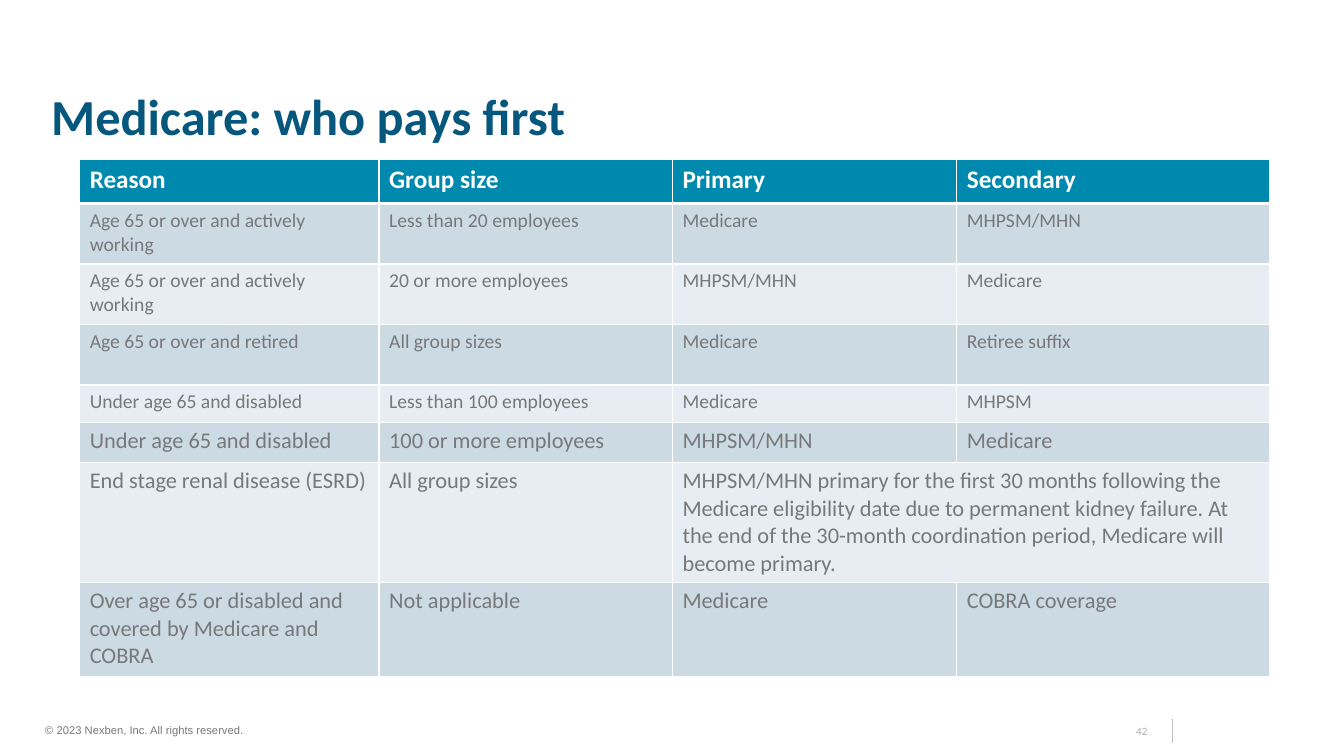
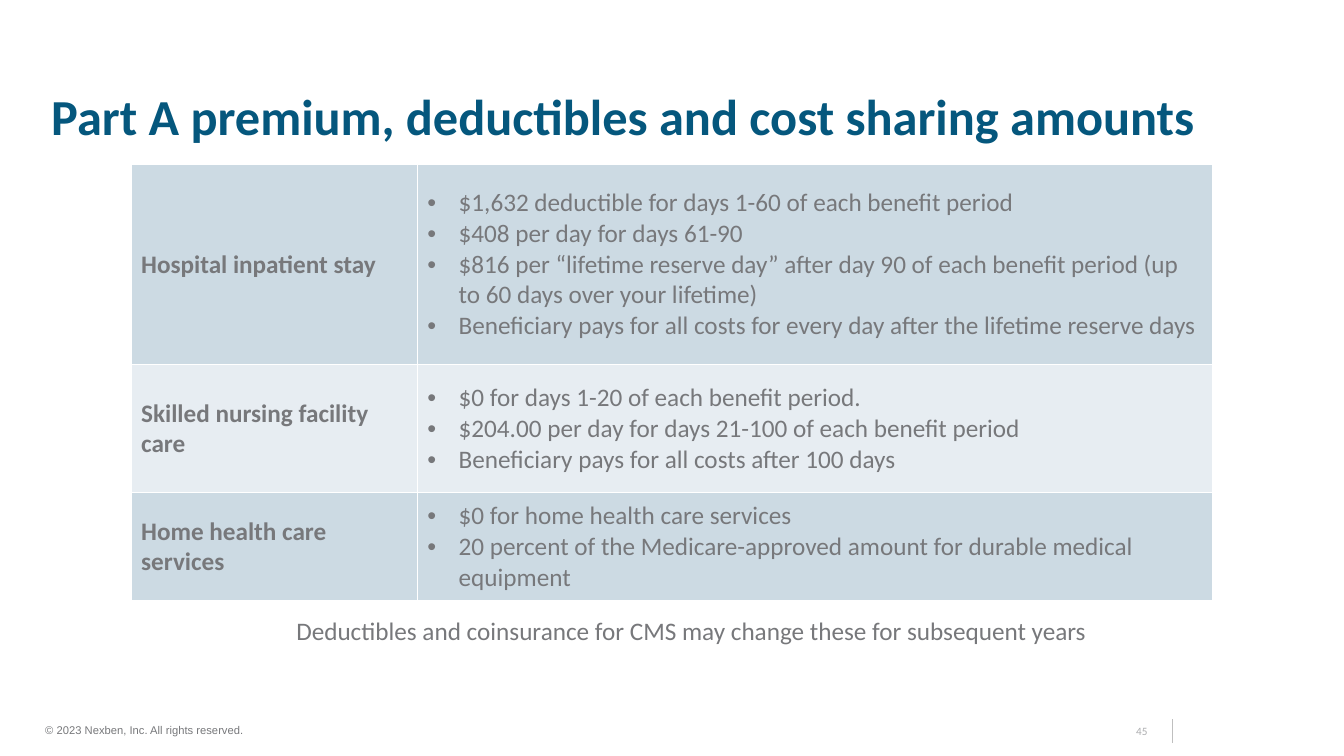
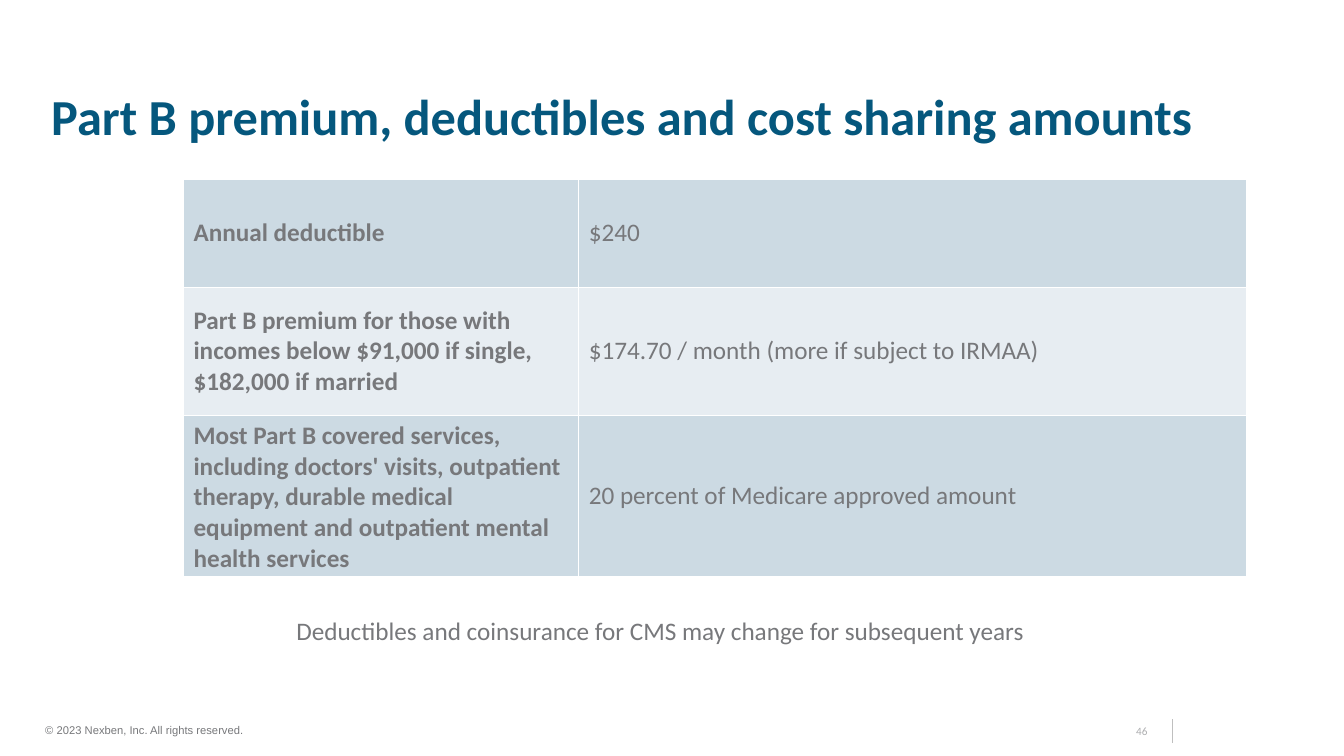
from pptx import Presentation
from pptx.dml.color import RGBColor
from pptx.enum.shapes import MSO_CONNECTOR
from pptx.enum.text import MSO_ANCHOR, PP_ALIGN
from pptx.oxml.ns import qn
from pptx.util import Inches, Pt
from lxml.etree import SubElement

WHITE, NAVY, TEAL = "FFFFFF", "05577D", "0089AE"
GRAY, LIGHT_GRAY, RULE_GRAY = "77787B", "ADAEB0", "BFBFBF"
BANDS = ("CCDAE3", "E7EDF2")

TITLE = {"name": "Calibri", "size": Pt(36), "bold": True, "color": NAVY}
HEADER = {"name": "Calibri", "size": Pt(18), "bold": True, "color": WHITE}
BODY = {"name": "Calibri", "size": Pt(18), "bold": False, "color": GRAY}
LABEL = {**BODY, "bold": True}
COPYRIGHT = {"name": "Arial", "size": Pt(8), "color": GRAY}
NUMBER = {"name": "Calibri", "size": Pt(8), "color": LIGHT_GRAY}

TITLE_BOX = (0.41, 0.3, 12.5, 1.2)
FOOTER_BOX = (0.35, 7.12, 11.28, 0.25)
NOTE_BOX = (2.84, 6.05, 8.51, 0.71)

PAYER_COLUMNS = (2.97, 2.91, 2.82, 3.1)
PAYER_HEADINGS = ("Reason", "Group size", "Primary", "Secondary")
PAYER_ROWS = (
    (0.6, 14, ("Age 65 or over and actively working", "Less than 20 employees",
               "Medicare", "MHPSM/MHN")),
    (0.6, 14, ("Age 65 or over and actively working", "20 or more employees",
               "MHPSM/MHN", "Medicare")),
    (0.6, 14, ("Age 65 or over and retired", "All group sizes",
               "Medicare", "Retiree suffix")),
    (0.37, 14, ("Under age 65 and disabled", "Less than 100 employees",
                "Medicare", "MHPSM")),
    (0.4, 16, ("Under age 65 and disabled", "100 or more employees",
               "MHPSM/MHN", "Medicare")),
    (1.19, 16, ("End stage renal disease (ESRD)", "All group sizes",
                "MHPSM/MHN primary for the first 30 months following the "
                "Medicare eligibility date due to permanent kidney failure. "
                "At the end of the 30-month coordination period, Medicare "
                "will become primary.")),
    (0.93, 16, ("Over age 65 or disabled and covered by Medicare and COBRA",
                "Not applicable", "Medicare", "COBRA coverage")),
)

COST_SLIDES = (
    {
        "title": "Part A premium, deductibles and cost sharing amounts",
        "number": "45",
        "origin": (1.3, 1.63),
        "columns": (2.84, 7.89),
        "rows": (
            (1.99, "Hospital inpatient stay", (
                "$1,632 deductible for days 1-60 of each benefit period",
                "$408 per day for days 61-90",
                "$816 per “lifetime reserve day” after day 90 of each benefit "
                "period (up to 60 days over your lifetime)",
                "Beneficiary pays for all costs for every day after the "
                "lifetime reserve days")),
            (1.27, "Skilled nursing facility care", (
                "$0 for days 1-20 of each benefit period.",
                "$204.00 per day for days 21-100 of each benefit period",
                "Beneficiary pays for all costs after 100 days")),
            (1.07, "Home health care services", (
                "$0 for home health care services",
                "20 percent of the Medicare-approved amount for durable "
                "medical equipment")),
        ),
        "note": "Deductibles and coinsurance for CMS may change these for "
                "subsequent years",
    },
    {
        "title": "Part B premium, deductibles and cost sharing amounts",
        "number": "46",
        "origin": (1.82, 1.78),
        "columns": (3.92, 6.62),
        "rows": (
            (1.07, "Annual deductible", ("$240",)),
            (1.27, "Part B premium for those with incomes below $91,000 if "
                   "single, $182,000 if married",
             ("$174.70 / month (more if subject to IRMAA)",)),
            (1.6, "Most Part B covered services, including doctors' visits, "
                  "outpatient therapy, durable medical equipment and "
                  "outpatient mental health services",
             ("20 percent of Medicare approved amount",)),
        ),
        "note": "Deductibles and coinsurance for CMS may change for "
                "subsequent years",
    },
)


def set_color(color_format, value):
    color_format.rgb = RGBColor.from_string(value)


def set_fill(fill, value):
    fill.solid()
    set_color(fill.fore_color, value)


def write_paragraph(paragraph, text, style):
    run = paragraph.add_run()
    run.text = text
    for name, value in style.items():
        if name == "color":
            set_color(run.font.color, value)
        else:
            setattr(run.font, name, value)


def add_text(slide, box, text, style, frame_format=None, paragraph_format=None):
    shape = slide.shapes.add_textbox(*map(Inches, box))
    frame = shape.text_frame
    paragraph = frame.paragraphs[0]
    for name, value in {"word_wrap": True, **(frame_format or {})}.items():
        setattr(frame, name, value)
    for name, value in (paragraph_format or {}).items():
        setattr(paragraph, name, value)
    write_paragraph(paragraph, text, style)


def add_footer(slide, box, number):
    left, top, width, height = box
    right, bottom = left + width, top + height
    points = (right, bottom, right, top + 0.01)
    divider = slide.shapes.add_connector(MSO_CONNECTOR.STRAIGHT, *map(Inches, points))
    set_color(divider.line.color, RULE_GRAY)
    divider.line.width = Pt(0.5)
    SubElement(divider._element.spPr, qn("a:effectLst"))
    at_bottom = {"vertical_anchor": MSO_ANCHOR.BOTTOM}
    add_text(slide, (left, top, 2.4, height - 0.01),
             "© 2023 Nexben, Inc. All rights reserved.", COPYRIGHT, at_bottom)
    add_text(slide, (right - 0.66, top + 0.01, 0.51, height - 0.01), number, NUMBER,
             {**at_bottom, "margin_left": 0}, {"alignment": PP_ALIGN.RIGHT})


def add_base_slide(presentation, title, number):
    slide = presentation.slides.add_slide(presentation.slide_layouts[6])
    add_footer(slide, FOOTER_BOX, number)
    add_text(slide, TITLE_BOX, title, TITLE,
             {"vertical_anchor": MSO_ANCHOR.BOTTOM}, {"line_spacing": 0.9})
    return slide


def add_bullet(paragraph):
    properties = paragraph._p.get_or_add_pPr()
    properties.set("marL", str(Inches(0.31)))
    properties.set("indent", str(-Inches(0.31)))
    SubElement(properties, qn("a:buFont")).set("typeface", "Arial")
    SubElement(properties, qn("a:buChar")).set("char", "•")


def set_borders(cell, widths):
    properties = cell._tc.get_or_add_tcPr()
    for side, width in zip(("lnL", "lnR", "lnT", "lnB"), widths):
        line = SubElement(properties, qn(f"a:{side}"), w=str(Pt(width)))
        fill = SubElement(line, qn("a:solidFill"))
        SubElement(fill, qn("a:srgbClr")).set("val", WHITE)


def add_plain_table(slide, origin, columns, heights):
    box = (*origin, sum(columns), sum(heights))
    table = slide.shapes.add_table(len(heights), len(columns), *map(Inches, box)).table
    for name in ("first_row", "horz_banding"):
        setattr(table, name, False)
    for column, width in zip(table.columns, columns):
        column.width = Inches(width)
    for row, height in zip(table.rows, heights):
        row.height = Inches(height)
    return table


def fill_cell(cell, lines, style, background, bulleted=False,
              anchor=MSO_ANCHOR.TOP, borders=(1, 1, 1, 1)):
    set_borders(cell, borders)
    set_fill(cell.fill, background)
    cell.vertical_anchor = anchor
    frame = cell.text_frame
    for index, line in enumerate(lines):
        paragraph = frame.add_paragraph() if index else frame.paragraphs[0]
        if bulleted:
            add_bullet(paragraph)
        write_paragraph(paragraph, line, style)


def add_payer_table(slide, origin):
    heights = [0.44] + [height for height, _, _ in PAYER_ROWS]
    table = add_plain_table(slide, origin, PAYER_COLUMNS, heights)
    for column, heading in enumerate(PAYER_HEADINGS):
        fill_cell(table.cell(0, column), [heading], HEADER, TEAL, borders=(1, 1, 1, 3))
    for row, (_, size, texts) in enumerate(PAYER_ROWS, 1):
        style = {**BODY, "size": Pt(size)}
        borders = (1, 1, 3 if row == 1 else 1, 1)
        for column, text in enumerate(texts):
            fill_cell(table.cell(row, column), [text], style,
                      BANDS[(row - 1) % 2], borders=borders)
        if len(texts) < len(PAYER_COLUMNS):
            last = len(PAYER_COLUMNS) - 1
            table.cell(row, len(texts) - 1).merge(table.cell(row, last))


def add_cost_table(slide, origin, columns, rows):
    table = add_plain_table(slide, origin, columns, [height for height, _, _ in rows])
    for row, (_, label, amounts) in enumerate(rows):
        background = BANDS[row % 2]
        fill_cell(table.cell(row, 0), [label], LABEL, background,
                  anchor=MSO_ANCHOR.MIDDLE)
        fill_cell(table.cell(row, 1), amounts, BODY, background,
                  bulleted=len(amounts) > 1, anchor=MSO_ANCHOR.MIDDLE)


def add_payer_slide(presentation):
    slide = add_base_slide(presentation, "Medicare: who pays first", "42")
    add_payer_table(slide, (0.79, 1.58))


def add_cost_slide(presentation, content):
    slide = add_base_slide(presentation, content["title"], content["number"])
    add_cost_table(slide, content["origin"], content["columns"], content["rows"])
    add_text(slide, NOTE_BOX, content["note"], BODY)


def main():
    presentation = Presentation()
    presentation.slide_width = Inches(13.33)
    presentation.slide_height = Inches(7.5)
    add_payer_slide(presentation)
    for content in COST_SLIDES:
        add_cost_slide(presentation, content)
    presentation.save("out.pptx")


if __name__ == "__main__":
    main()
